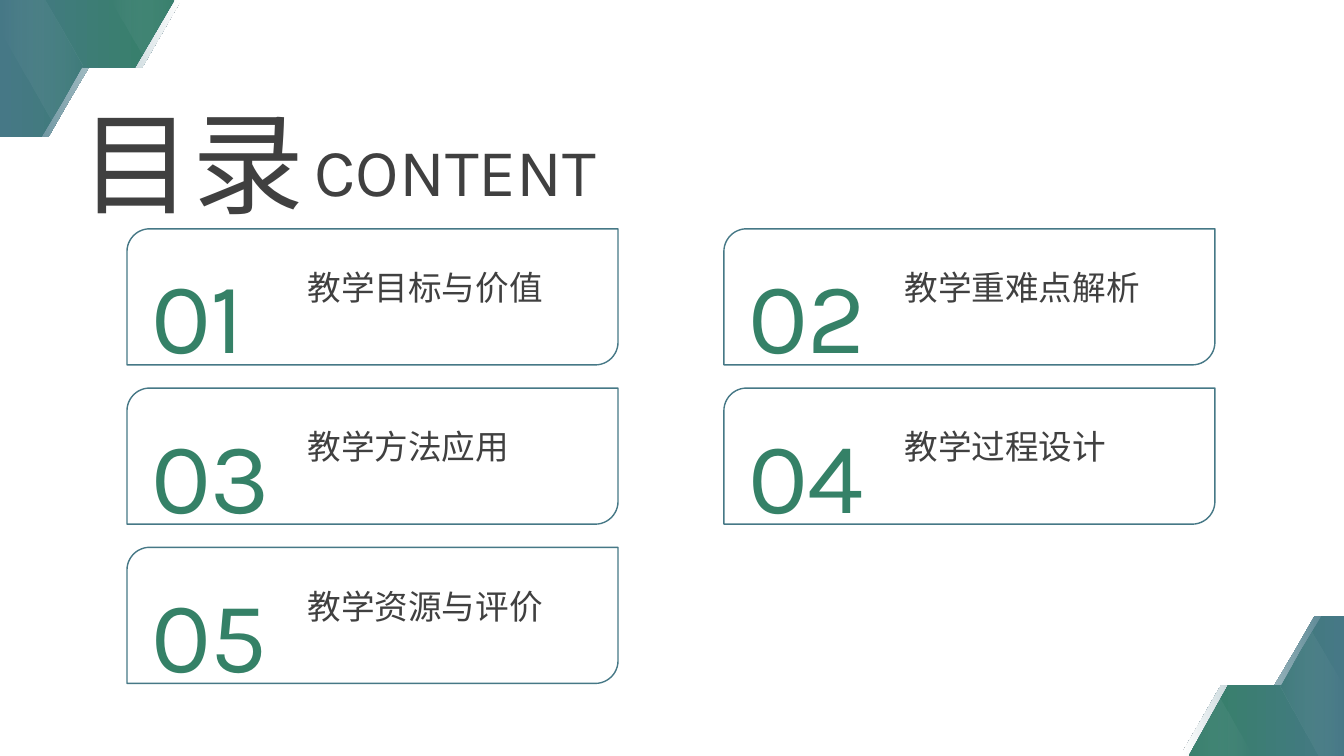
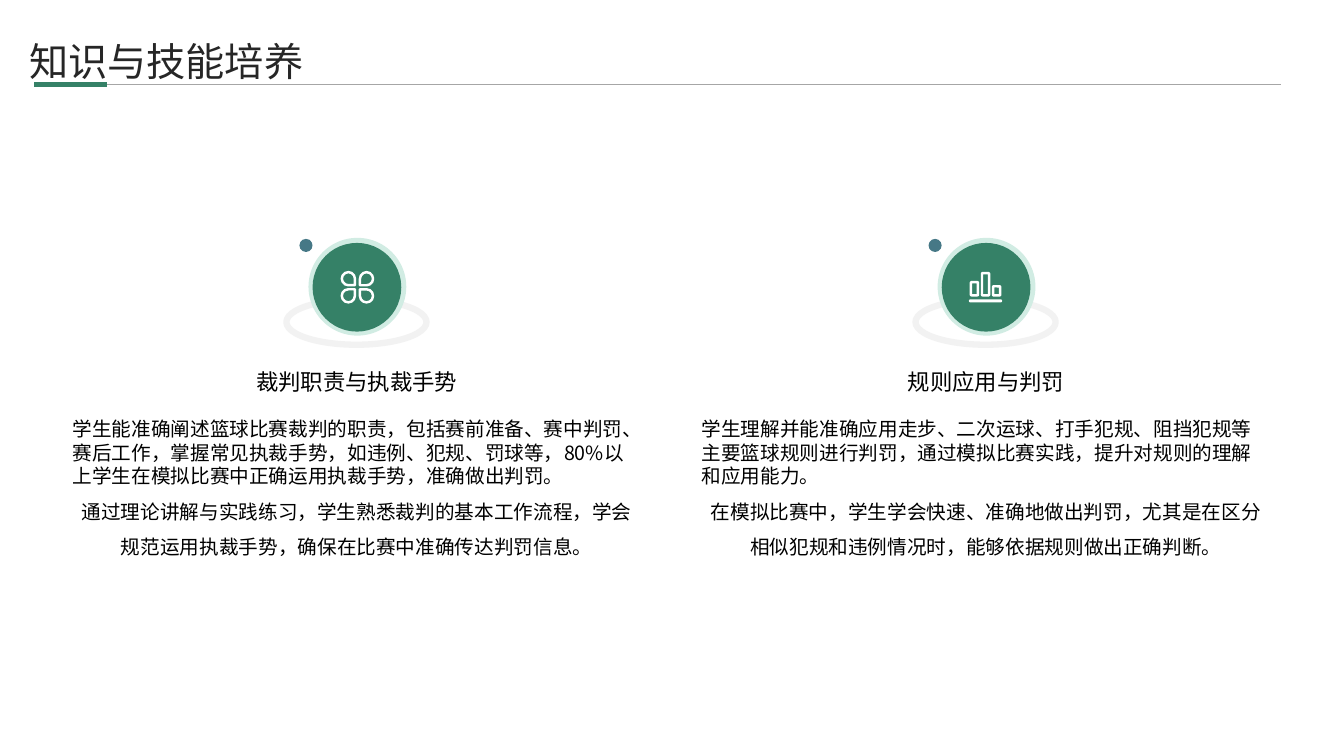
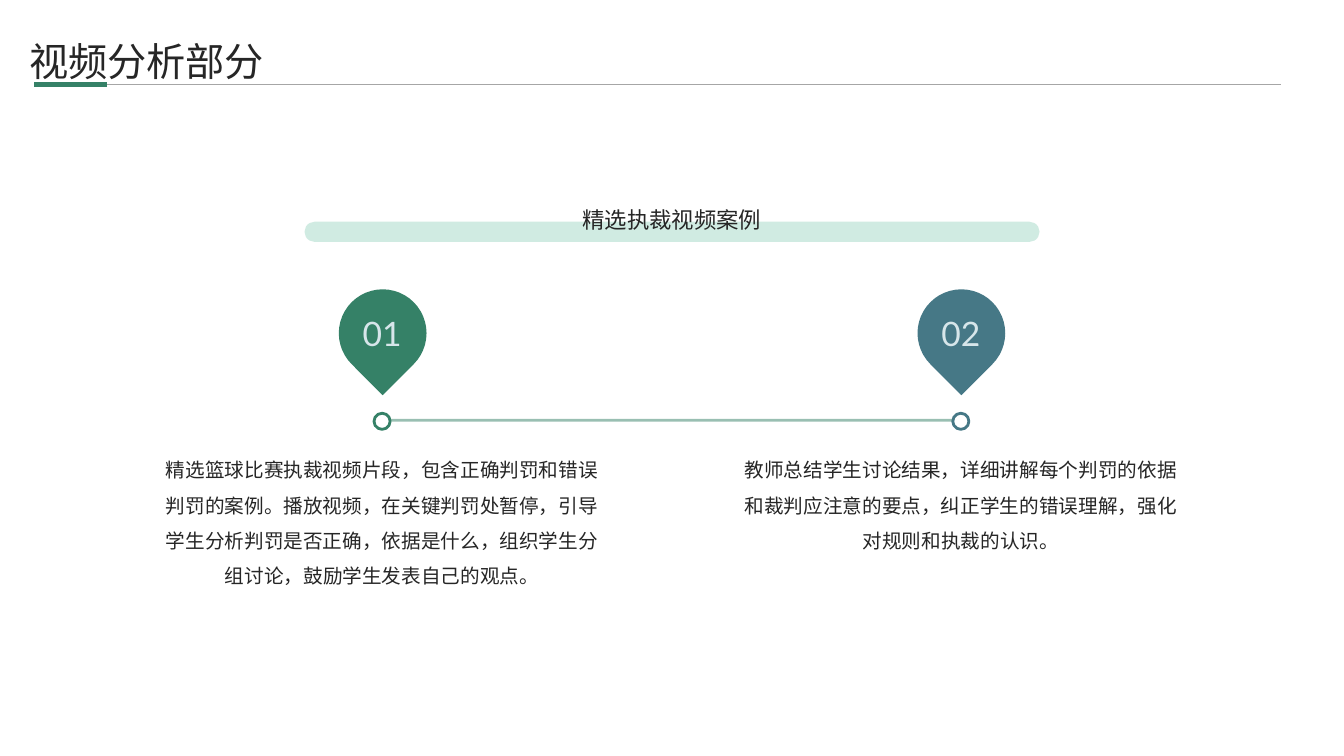
from lxml.etree import SubElement
from pptx import Presentation
from pptx.dml.color import RGBColor
from pptx.enum.shapes import MSO_CONNECTOR, MSO_SHAPE
from pptx.enum.text import MSO_ANCHOR, PP_ALIGN
from pptx.oxml.ns import qn
from pptx.util import Pt

PX = 9144  # 100 px to the inch
WIDE, HIGH = 1333, 750

GREEN = RGBColor(0x35, 0x81, 0x67)
BLUE = RGBColor(0x46, 0x78, 0x86)
PALE = RGBColor(0xD7, 0xE6, 0xEA)
MINT = RGBColor(0xD1, 0xEC, 0xE3)
LEAF = RGBColor(0xA2, 0xD9, 0xC6)
WHITE = RGBColor(0xFF, 0xFF, 0xFF)
MIST = RGBColor(0xF2, 0xF2, 0xF2)
GREY = RGBColor(0xA6, 0xA6, 0xA6)
SLATE = RGBColor(0x40, 0x40, 0x40)
INK = RGBColor(0x26, 0x26, 0x26)
BLACK = RGBColor(0, 0, 0)

KARLA, LATO, NOTO = "Karla", "Lato", "Noto Sans CJK SC"
LEFT, MID = PP_ALIGN.LEFT, PP_ALIGN.CENTER
TOP, CENTRE, BASE = MSO_ANCHOR.TOP, MSO_ANCHOR.MIDDLE, MSO_ANCHOR.BOTTOM

# Outlines of the corner ornament, seen at the top left
RIM = [(0, 0), (179, 0), (179, 1), (141, 67), (88, 67), (68, 101), (48, 136), (0, 136)]
BODY = [(0, 0), (173, 0), (134, 67), (81, 67), (62, 101), (41, 136), (0, 136)]
FACETS = [
    [(110, 0), (173, 0), (142, 54)],
    [(0, 0), (44, 0), (82, 66), (51, 119), (19, 64), (0, 31)],
]

TOPICS = ["教学目标与价值", "教学重难点解析", "教学方法应用", "教学过程设计", "教学资源与评价"]

SKILLS = [
    ("裁判职责与执裁手势",
     "学生能准确阐述篮球比赛裁判的职责，包括赛前准备、赛中判罚、赛后工作，掌握常见执裁手势，"
     "如违例、犯规、罚球等，80%以上学生在模拟比赛中正确运用执裁手势，准确做出判罚。",
     "通过理论讲解与实践练习，学生熟悉裁判的基本工作流程，学会规范运用执裁手势，"
     "确保在比赛中准确传达判罚信息。"),
    ("规则应用与判罚",
     "学生理解并能准确应用走步、二次运球、打手犯规、阻挡犯规等主要篮球规则进行判罚，"
     "通过模拟比赛实践，提升对规则的理解和应用能力。",
     "在模拟比赛中，学生学会快速、准确地做出判罚，尤其是在区分相似犯规和违例情况时，"
     "能够依据规则做出正确判断。"),
]

STEPS = [
    (GREEN, "精选篮球比赛执裁视频片段，包含正确判罚和错误判罚的案例。播放视频，在关键判罚处暂停，"
            "引导学生分析判罚是否正确，依据是什么，组织学生分组讨论，鼓励学生发表自己的观点。"),
    (BLUE, "教师总结学生讨论结果，详细讲解每个判罚的依据和裁判应注意的要点，"
           "纠正学生的错误理解，强化对规则和执裁的认识。"),
]


def style(item, **values):
    for name, value in values.items():
        setattr(item, name, value)


def place(item, box):
    style(item, **dict(zip(("left", "top", "width", "height"), (v * PX for v in box))))


def fade(color, share):
    """Give a colour element an opacity in percent."""
    SubElement(color, qn("a:alpha")).set("val", str(share * 1000))


def write(frame, paras, font, size, color, anchor=TOP, inset=(0, 0), wrap=True):
    """Fill a frame with (text, alignment, line spacing) paragraphs."""
    across, down = (v * PX for v in inset)
    style(frame, word_wrap=wrap, vertical_anchor=anchor, margin_left=across,
          margin_right=across, margin_top=down, margin_bottom=down)
    for i, (words, align, space) in enumerate(paras):
        para = frame.add_paragraph() if i else frame.paragraphs[0]
        style(para, alignment=align, line_spacing=space, space_before=Pt(0))
        run = para.add_run()
        run.text = words
        style(run.font, name=font, size=Pt(size))
        run.font.color.rgb = color
        SubElement(run.font._element, qn("a:ea")).set("typeface", font)


def label(slide, box, paras, *look, **more):
    text = slide.shapes.add_textbox(*(v * PX for v in box))
    write(text.text_frame, paras, *look, **more)


def shape(slide, kind, box, fill=None, line=None, width=1, turn=0):
    item = slide.shapes.add_shape(kind, *(v * PX for v in box))
    item.shadow.inherit = False
    item.rotation = turn
    if fill is None:
        item.fill.background()
    else:
        item.fill.solid()
        item.fill.fore_color.rgb = fill
    if line is None:
        item.line.fill.background()
    else:
        item.line.color.rgb = line
        item.line.width = Pt(width)
    return item


def rule(slide, start, end, y, color, width):
    line = slide.shapes.add_connector(
        MSO_CONNECTOR.STRAIGHT, start * PX, y * PX, end * PX, y * PX)
    line.line.color.rgb = color
    line.line.width = Pt(width)
    SubElement(line._element.spPr, qn("a:effectLst"))
    return line


def blend(slide, points, colors, angle, shares=()):
    """Draw an outline filled with a gradient of two colours."""
    draft = slide.shapes.build_freeform(*points[0], scale=PX)
    draft.add_line_segments(points[1:], close=True)
    item = draft.convert_to_shape()
    item.shadow.inherit = False
    item.line.fill.background()
    item.fill.gradient()
    item.fill.gradient_angle = angle
    for stop, color, spot in zip(item.fill.gradient_stops, colors, (0, 1)):
        stop.color.rgb = color
        stop.position = spot
    tints = item._element.spPr.iter(qn("a:srgbClr"))
    for tint, share in zip(list(tints), shares):
        fade(tint, share)


def swing(points):
    """Turn the ornament half round into the bottom right corner."""
    return [(min(WIDE, 1352 - x), 747 - y if y else HIGH) for x, y in points]


def corner(slide, move, angle):
    blend(slide, move(RIM), (BLUE, WHITE), angle)
    blend(slide, move(BODY), (BLUE, GREEN), angle)
    for facet in FACETS:
        blend(slide, move(facet), (BLUE, PALE), 180 - angle, (22, 0))


def start(deck, box, words, *look, **more):
    """Add a slide and set its title."""
    slide = deck.slides.add_slide(deck.slide_layouts[5])
    place(slide.shapes.title, box)
    write(slide.shapes.title.text_frame, words, *look, **more)
    return slide


def topic(deck, words):
    slide = start(deck, (19, 27, 1251, 53), [(words, LEFT, 1.1)],
                  NOTO, 28, INK, inset=(10, 5))
    rule(slide, 34, 1271, 84, GREY, 0.5)
    rule(slide, 34, 106, 84, GREEN, 3.5)
    return slide


def card(slide, x, y, number, words):
    shape(slide, MSO_SHAPE.ROUND_2_DIAG_RECTANGLE, (x, y, 487, 135), WHITE, BLUE)
    label(slide, (x + 13, y + 6, 160, 121), [(f"{number:02}", LEFT, 1.1)],
          KARLA, 72, GREEN, inset=(11, 6), wrap=False)
    label(slide, (x + 179, y + 26, 309, 80), [(words, LEFT, 1.3)], KARLA, 24, SLATE)


def clover(slide, x, y):
    for i, (col, row) in enumerate([(0, 0), (1, 0), (1, 1), (0, 1)]):
        shape(slide, MSO_SHAPE.TEAR, (x - 15 + col * 18, y - 15 + row * 17, 13, 13),
              line=WHITE, width=1.75, turn=90 + i * 90)


def bars(slide, x, y):
    for i, tall in enumerate((13, 22, 9)):
        bar = shape(slide, MSO_SHAPE.ROUNDED_RECTANGLE,
                    (x - 15 + i * 11, y + 8 - tall, 7, tall), line=WHITE, width=1.75)
        bar.adjustments[0] = 0.1
    foot = shape(slide, MSO_SHAPE.ROUNDED_RECTANGLE, (x - 17, y + 12, 33, 3), WHITE)
    foot.adjustments[0] = 0.5


def skill(slide, x, icon, head, first, second):
    label(slide, (x, 414, 564, 185), [(first, LEFT, 1.0), (second, MID, 1.5)],
          NOTO, 14, BLACK)
    label(slide, (x, 350, 564, 54), [(head, MID, 1.1)], NOTO, 16, BLACK, anchor=CENTRE)
    oval = MSO_SHAPE.OVAL
    shape(slide, oval, (x + 212, 297, 139, 45), line=MIST, width=4.5)
    shape(slide, oval, (x + 234, 236, 97, 97), MINT)
    shape(slide, oval, (x + 238, 241, 88, 88), GREEN)
    icon(slide, x + 282, 285)
    shape(slide, oval, (x + 225, 237, 13, 13), BLUE)


def step(slide, x, number, color, words):
    shape(slide, MSO_SHAPE.TEAR, (x - 43, 287, 87, 87), color, turn=135)
    shape(slide, MSO_SHAPE.OVAL, (x - 8, 410, 16, 16), WHITE, color, 2)
    label(slide, (x - 215, 443, 430, 195), [(words, MID, 1.5)], NOTO, 14, INK)
    label(slide, (x - 45, 310, 90, 40), [(f"{number:02}", MID, 1.0)], LATO, 24, PALE)


def agenda(deck):
    slide = start(deck, (-31, 79, 444, 122), [("目录", MID, 1.1)], KARLA, 80, SLATE)
    corner(slide, swing, 180)
    corner(slide, list, 0)
    label(slide, (312, 120, 608, 74), [("CONTENT", LEFT, 1.1)], KARLA, 48, SLATE)
    for i, words in enumerate(TOPICS):
        row, col = divmod(i, 2)
        card(slide, 126 + col * 592, 227 + row * 158, i + 1, words)


def skills(deck):
    slide = topic(deck, "知识与技能培养")
    for i, (icon, texts) in enumerate(zip((clover, bars), SKILLS)):
        skill(slide, 72 + i * 624, icon, *texts)


def video(deck):
    slide = topic(deck, "视频分析部分")
    band = shape(slide, MSO_SHAPE.ROUNDED_RECTANGLE, (302, 220, 729, 20), LEAF)
    band.adjustments[0] = 0.5
    label(slide, (302, 157, 729, 74), [("精选执裁视频案例", MID, 1.2)],
          NOTO, 16, INK, anchor=BASE)
    track = rule(slide, 380, 951, 417, GREEN, 2)
    for item in (band, track):
        fade(next(item._element.spPr.iter(qn("a:srgbClr"))), 50)
    for i, (color, words) in enumerate(STEPS):
        step(slide, 379 + i * 574, i + 1, color, words)


def main():
    deck = Presentation()
    style(deck, slide_width=WIDE * PX, slide_height=HIGH * PX)
    agenda(deck)
    skills(deck)
    video(deck)
    deck.save("out.pptx")


if __name__ == "__main__":
    main()
